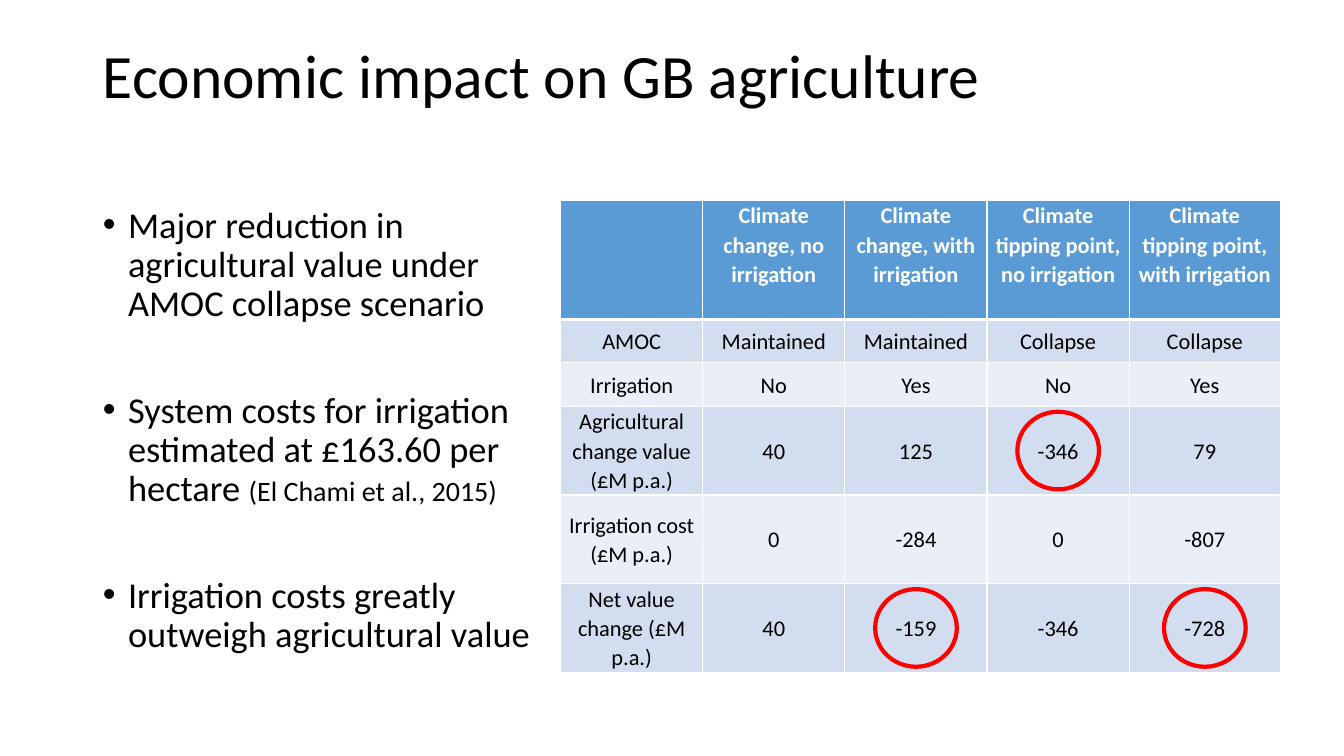
from lxml import etree
from pptx import Presentation
from pptx.dml.color import RGBColor
from pptx.enum import shapes, text
from pptx.oxml import ns
from pptx.util import Inches, Pt

FONT = "Calibri"
BLACK = RGBColor(0x00, 0x00, 0x00)
WHITE = RGBColor(0xFF, 0xFF, 0xFF)
HEADER_BLUE = RGBColor(0x5B, 0x9B, 0xD5)
BAND_BLUE = RGBColor(0xD2, 0xDE, 0xEF)
PALE_BLUE = RGBColor(0xEA, 0xEF, 0xF7)
RED = RGBColor(0xFF, 0x00, 0x00)

TITLE = "Economic impact on GB agriculture"
FINDINGS = [
    [("Major reduction in agricultural value under AMOC collapse scenario", 26)],
    [("System costs for irrigation estimated at £163.60 per hectare ", 26),
     ("(El Chami et al., 2015)", 20)],
    [("Irrigation costs greatly outweigh agricultural value", 26)],
]
SCENARIOS = [
    ["", "Climate change, no irrigation", "Climate change, with irrigation",
     "Climate tipping point, no irrigation", "Climate tipping point, with irrigation"],
    ["AMOC", "Maintained", "Maintained", "Collapse", "Collapse"],
    ["Irrigation", "No", "Yes", "No", "Yes"],
    ["Agricultural change value (£M p.a.)", "40", "125", "-346", "79"],
    ["Irrigation cost\n(£M p.a.)", "0", "-284", "0", "-807"],
    ["Net value change (£M p.a.)", "40", "-159", "-346", "-728"],
]
COLUMN_WIDTHS = [1.41, 1.41, 1.41, 1.41, 1.5]
ROW_HEIGHTS = [1.18, 0.43, 0.43, 0.88, 0.88, 0.88]
CIRCLED_CELLS = [(3, 3), (5, 4), (5, 2)]  # row, column
CIRCLE_SIZE = (0.81, 0.77)


def add_run(paragraph, words, size, color=BLACK, bold=False):
    run = paragraph.add_run()
    run.text = words
    run.font.name = FONT
    run.font.size = Pt(size)
    run.font.bold = bold
    run.font.color.rgb = color


def place(placeholder, left, top, width, height):
    placeholder.left, placeholder.top = Inches(left), Inches(top)
    placeholder.width, placeholder.height = Inches(width), Inches(height)
    frame = placeholder.text_frame
    frame.word_wrap = True
    frame.auto_size = text.MSO_AUTO_SIZE.NONE
    frame.vertical_anchor = text.MSO_ANCHOR.TOP
    return frame


def fill_title(slide, *box):
    heading = place(slide.shapes.title, *box).paragraphs[0]
    heading.alignment = text.PP_ALIGN.LEFT
    heading.line_spacing = 0.9
    add_run(heading, TITLE, 44)


def fill_findings(slide, *box):
    frame = place(slide.placeholders[1], *box)
    for index, finding in enumerate(FINDINGS):
        item = frame.add_paragraph() if index else frame.paragraphs[0]
        item.line_spacing = 0.9
        item.space_before = Pt(48 if index else 10)
        properties = item._p.get_or_add_pPr()
        properties.set("marL", str(Inches(0.25)))
        properties.set("indent", str(-Inches(0.25)))
        bullet_font = etree.SubElement(properties, ns.qn("a:buFont"))
        bullet_font.set("typeface", "Arial")
        etree.SubElement(properties, ns.qn("a:buChar")).set("char", "•")
        for words, size in finding:
            add_run(item, words, size)


def set_borders(cell, bottom_width):
    properties = cell._tc.get_or_add_tcPr()
    for side, width in (("L", 1), ("R", 1), ("T", 1), ("B", bottom_width)):
        line = etree.SubElement(properties, ns.qn("a:ln" + side), w=str(Pt(width)))
        fill = etree.SubElement(line, ns.qn("a:solidFill"))
        etree.SubElement(fill, ns.qn("a:srgbClr"), val=str(WHITE))


def fill_cell(cell, words, row):
    is_header = row == 0
    set_borders(cell, 3 if is_header else 1)
    cell.fill.solid()
    cell.fill.fore_color.rgb = (
        HEADER_BLUE if is_header else BAND_BLUE if row % 2 else PALE_BLUE)
    cell.margin_left = cell.margin_right = Inches(0.07)
    cell.margin_top = cell.margin_bottom = 0
    cell.vertical_anchor = text.MSO_ANCHOR.TOP if is_header else text.MSO_ANCHOR.MIDDLE
    if not words:
        return
    label = cell.text_frame.paragraphs[0]
    label.alignment = text.PP_ALIGN.CENTER
    label.line_spacing = 1.07
    for index, line in enumerate(words.split("\n")):
        if index:
            label.add_line_break()
        add_run(label, line, 16, WHITE if is_header else BLACK, is_header)


def add_scenarios(slide, left, top):
    table = slide.shapes.add_table(
        len(ROW_HEIGHTS), len(COLUMN_WIDTHS), Inches(left), Inches(top),
        Inches(sum(COLUMN_WIDTHS)), Inches(sum(ROW_HEIGHTS))).table
    for column, width in zip(table.columns, COLUMN_WIDTHS):
        column.width = Inches(width)
    for row, height in zip(table.rows, ROW_HEIGHTS):
        row.height = Inches(height)
    for row, values in enumerate(SCENARIOS):
        for column, words in enumerate(values):
            fill_cell(table.cell(row, column), words, row)
    for row, column in CIRCLED_CELLS:
        circle_cell(slide, left, top, row, column)


def circle_cell(slide, left, top, row, column):
    """Ring one cell of the table whose top left corner is given."""
    width, height = CIRCLE_SIZE
    center_x = left + sum(COLUMN_WIDTHS[:column]) + COLUMN_WIDTHS[column] / 2
    center_y = top + sum(ROW_HEIGHTS[:row]) + ROW_HEIGHTS[row] / 2
    ring = slide.shapes.add_shape(
        shapes.MSO_SHAPE.OVAL, Inches(center_x - width / 2),
        Inches(center_y - height / 2), Inches(width), Inches(height))
    ring.shadow.inherit = False
    ring.fill.background()
    ring.line.color.rgb = RED
    ring.line.width = Pt(3)


def main():
    deck = Presentation()
    deck.slide_width, deck.slide_height = Inches(13.33), Inches(7.5)
    slide = deck.slides.add_slide(deck.slide_layouts[1])
    fill_title(slide, 0.92, 0.4, 11.5, 1.45)
    fill_findings(slide, 0.92, 2, 4.57, 4.76)
    add_scenarios(slide, 5.56, 1.99)
    deck.save("out.pptx")


if __name__ == "__main__":
    main()
